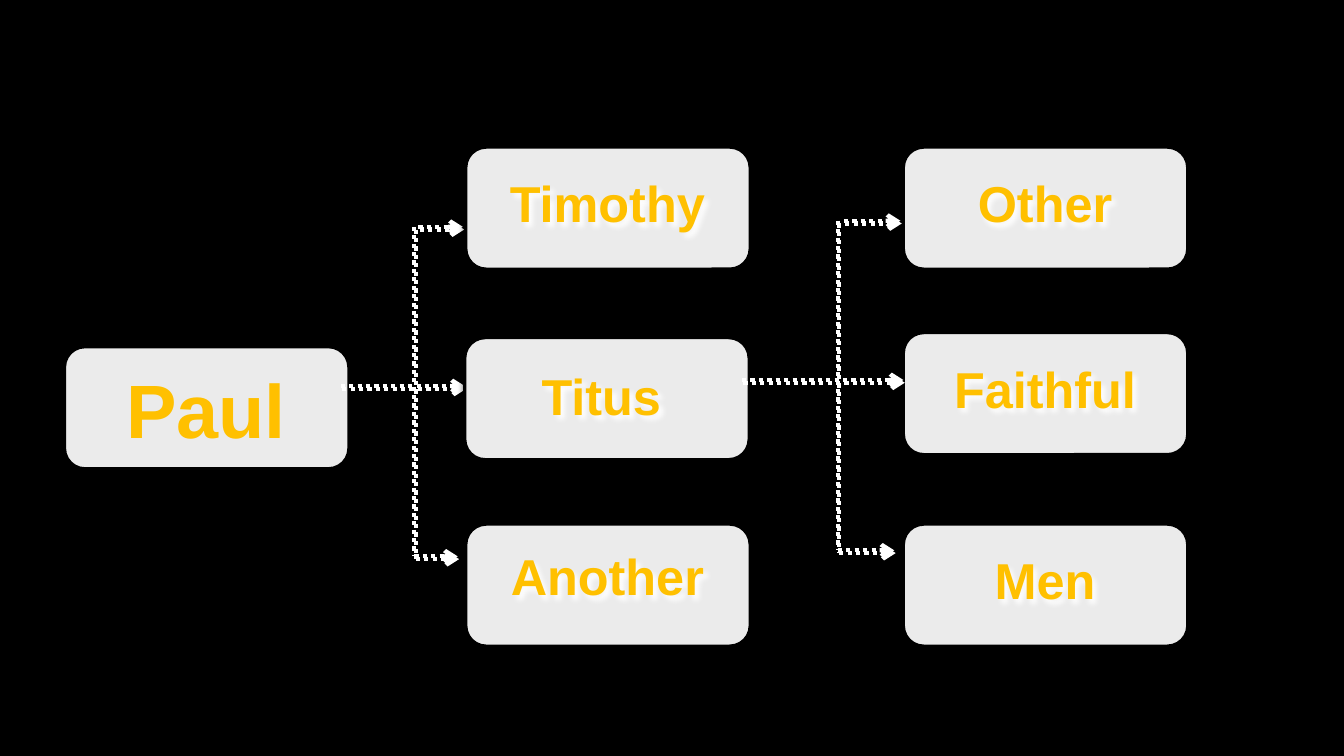
"""Build the discipleship chain slide: Paul, his helpers, other faithful men."""
from lxml import etree
from pptx import Presentation
from pptx.dml.color import RGBColor
from pptx.enum.dml import MSO_LINE
from pptx.enum.shapes import MSO_CONNECTOR as CONN, MSO_SHAPE as SHAPE
from pptx.enum.text import MSO_AUTO_SIZE as AUTO, PP_ALIGN as ALIGN
from pptx.oxml.ns import qn
from pptx.util import Inches, Pt

BLACK = RGBColor(0x00, 0x00, 0x00)
WHITE = RGBColor(0xFF, 0xFF, 0xFF)
PANEL = RGBColor(0xEB, 0xEB, 0xEB)
GOLD = RGBColor(0xFF, 0xC0, 0x00)

CARD_W, CARD_H = 2.82, 1.21
LABEL_W = 2.23

# name, card left and top, label offset from the card
PAUL = ("Paul", 0.64, 3.44, 0.29, 0.11)
NAMES = [
    ("Timothy", 4.62, 1.46, 0.29, 0.2),
    ("Titus", 4.61, 3.35, 0.24, 0.22),
    ("Another", 4.62, 5.2, 0.29, 0.16),
    ("Other", 8.96, 1.46, 0.29, 0.2),
    ("Faithful", 8.96, 3.3, 0.29, 0.2),
    ("Men", 8.96, 5.2, 0.29, 0.2),
]
# trunk x, top, stem y, stem start and end, upper arm start and end, lower arm end
PAUL_FORK = (4.11, 2.25, 3.83, 3.38, 4.61, 4.15, 4.59, 4.54)
TITUS_FORK = (8.31, 2.19, 3.77, 7.36, 8.96, 8.37, 8.93, 8.87)
TRUNK_H = 3.27


def add_shadow(shape, color, alpha=100, blur=0, dist=2.2, angle=63):
    """Append an outer shadow to a finished shape."""
    effects = etree.SubElement(shape._element.spPr, qn("a:effectLst"))
    outer = etree.SubElement(
        effects, qn("a:outerShdw"), blurRad=str(Pt(blur)), dist=str(Pt(dist)),
        dir=str(angle * 60000), algn="ctr", rotWithShape="0")
    clr = etree.SubElement(outer, qn("a:srgbClr"), val=str(color))
    etree.SubElement(clr, qn("a:alpha"), val=str(alpha * 1000))


def add_label(s, text, x, y, size=36, height=0.71, glow=True):
    """Add a centred bold label."""
    box = s.shapes.add_textbox(Inches(x), Inches(y), Inches(LABEL_W), Inches(height))
    tf = box.text_frame
    tf.word_wrap = True
    tf.auto_size = AUTO.SHAPE_TO_FIT_TEXT
    p = tf.paragraphs[0]
    p.alignment = ALIGN.CENTER
    r = p.add_run()
    r.text = text
    r.font.name, r.font.size, r.font.bold = "Arial", Pt(size), True
    r.font.color.rgb = GOLD
    if glow:
        add_shadow(box, WHITE, blur=4, dist=4, angle=45)


def add_card(s, name, x, y, dx, dy, **label_format):
    """Add a rounded card with its label."""
    card = s.shapes.add_shape(
        SHAPE.ROUNDED_RECTANGLE, Inches(x), Inches(y), Inches(CARD_W), Inches(CARD_H))
    card.adjustments[0] = 0.167
    card.fill.solid()
    card.fill.fore_color.rgb = PANEL
    card.line.color.rgb = BLACK
    card.line.width = Pt(2.25)
    add_shadow(card, BLACK, alpha=65, blur=5, dist=3, angle=90)
    add_label(s, name, x + dx, y + dy, **label_format)


def add_line(s, x1, y1, x2, y2, arrow=True):
    """Add a dotted white line, with an arrowhead if asked."""
    line = s.shapes.add_connector(
        CONN.STRAIGHT, Inches(x1), Inches(y1), Inches(x2), Inches(y2))
    line.line.color.rgb = WHITE
    line.line.width = Pt(3)
    line.line.dash_style = MSO_LINE.ROUND_DOT
    if arrow:
        etree.SubElement(line.line._get_or_add_ln(), qn("a:tailEnd"), type="arrow")
    add_shadow(line, WHITE)


def add_fork(s, trunk, top, stem_y, stem_x, stem_end, arm_x, upper_end, lower_end):
    """Add a trunk with three arrows leaving it."""
    bottom = top + TRUNK_H
    add_line(s, trunk, top, trunk, bottom, arrow=False)
    add_line(s, stem_x, stem_y, stem_end, stem_y)
    add_line(s, arm_x, top, upper_end, top)
    add_line(s, trunk, bottom, lower_end, bottom)


def main():
    """Draw the slide and save it."""
    prs = Presentation()
    prs.slide_width, prs.slide_height = Inches(13.33), Inches(7.5)
    s = prs.slides.add_slide(prs.slide_layouts[6])
    s.background.fill.solid()
    s.background.fill.fore_color.rgb = BLACK
    add_card(s, *PAUL, size=54, height=1.01, glow=False)
    add_fork(s, *PAUL_FORK)
    for card in NAMES:
        add_card(s, *card)
    add_fork(s, *TITUS_FORK)
    prs.save("out.pptx")


if __name__ == "__main__":
    main()
